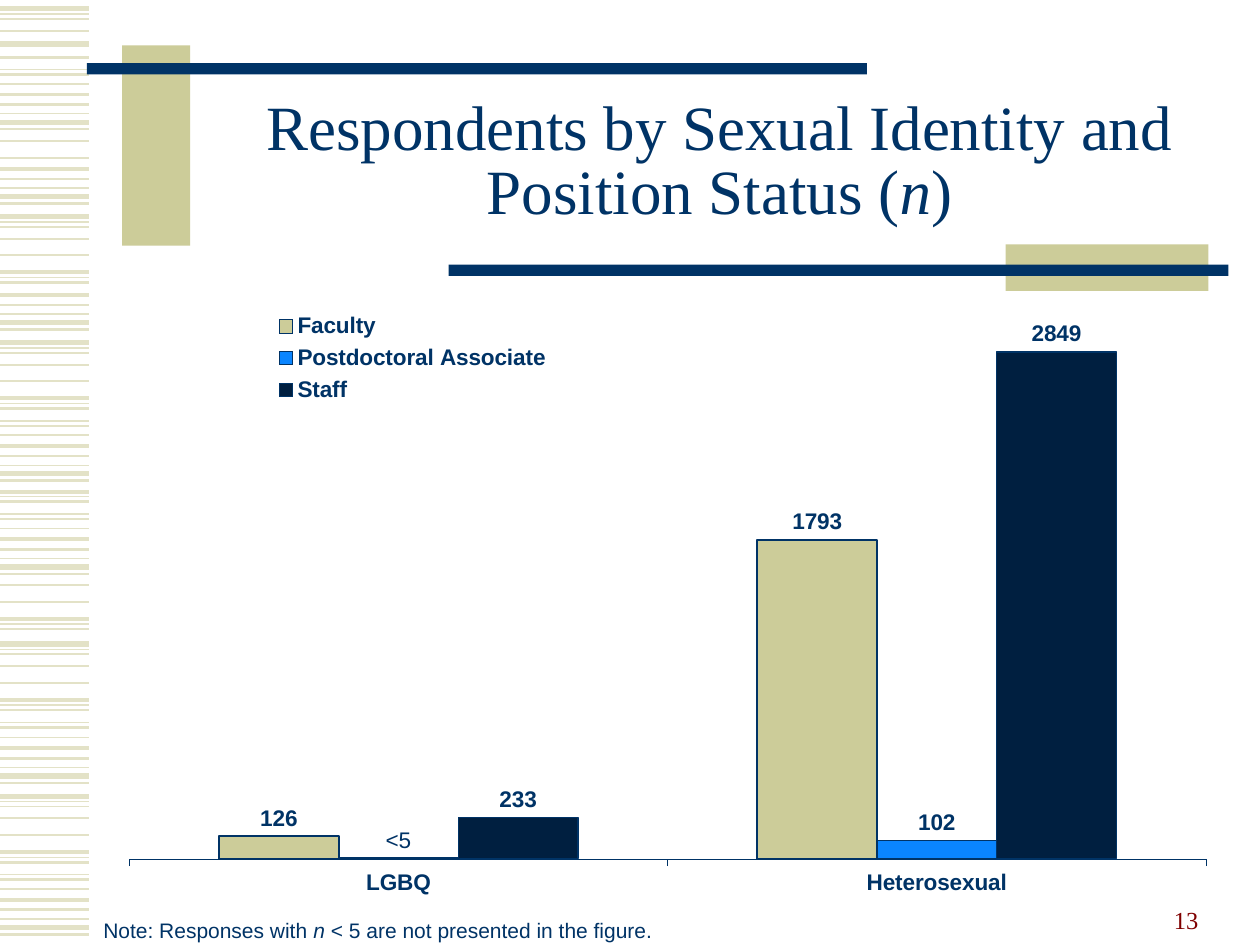
"""Build the slide on respondents by sexual identity and position status."""
from typing import NamedTuple

from lxml.etree import SubElement
from pptx import Presentation
from pptx.chart.data import CategoryChartData
from pptx.dml.color import RGBColor
from pptx.enum.chart import XL_CHART_TYPE as ChartType
from pptx.enum.chart import XL_LABEL_POSITION as LabelPosition
from pptx.enum.chart import XL_LEGEND_POSITION as LegendPosition
from pptx.enum.chart import XL_TICK_LABEL_POSITION as TickLabelPosition
from pptx.enum.chart import XL_TICK_MARK as TickMark
from pptx.enum.shapes import MSO_CONNECTOR as Connector
from pptx.enum.shapes import MSO_SHAPE as Shape
from pptx.enum.text import MSO_ANCHOR as Anchor
from pptx.enum.text import MSO_AUTO_SIZE as AutoSize
from pptx.enum.text import PP_ALIGN as Align
from pptx.oxml.ns import qn
from pptx.util import Pt

COLORS = {
    "navy": "003366",
    "khaki": "CCCC99",
    "stripe": "E3E2C7",
    "blue": "0A85FF",
    "midnight": "001F40",
    "maroon": "800000",
}


class Box(NamedTuple):
    left: float
    top: float
    width: float
    height: float

    def lengths(self) -> list:
        return [Pt(value) for value in self]


class Bar(NamedTuple):
    box: Box
    color: str


class Stripe(NamedTuple):
    offset: float
    weight: float


class StripeRun(NamedTuple):
    top: float
    stripes: list


class Series(NamedTuple):
    name: str
    values: tuple
    color: str
    line_width: float


SHORT_BAND = [Stripe(-22, 1), Stripe(-15.8, 2.25), Stripe(-10.1, 1.5),
              Stripe(-4.8, 0.75), Stripe(0, 3), Stripe(4, 1.5)]
LONG_BAND = [Stripe(0, 3), Stripe(3, 0.75), Stripe(5.9, 1), Stripe(12.6, 1),
             Stripe(22.1, 1), Stripe(31.9, 2.25), Stripe(34.8, 0.75),
             Stripe(37.7, 1.5), Stripe(44.8, 0.75), Stripe(47.7, 1.5)]
STRIPE_RUNS = [StripeRun(top, SHORT_BAND)
               for top in (69.8, 112.3, 270.7, 324, 443.5, 529.9)] + [
    StripeRun(184.3, SHORT_BAND[1:]),
    StripeRun(-5, LONG_BAND[7:]),
    StripeRun(5, LONG_BAND[:4]),
    StripeRun(123.8, LONG_BAND[:8]),
    StripeRun(195.8, LONG_BAND),
    StripeRun(249, LONG_BAND[5:]),
    StripeRun(321.8, LONG_BAND[3:8]),
    StripeRun(368, LONG_BAND),
    StripeRun(455, LONG_BAND),
    StripeRun(0, [Stripe(25.2, 3), Stripe(80.6, 1)]),
]
BARS = [
    Bar(Box(69.8, 25.9, 38.9, 114.5), "khaki"),
    Bar(Box(49.7, 36, 445.7, 6.5), "navy"),
    Bar(Box(574.6, 139.7, 115.9, 26.6), "khaki"),
    Bar(Box(256.3, 151.2, 445.7, 6.5), "navy"),
]
SERIES = [
    Series("Faculty", (126, 1793), "khaki", 1),
    Series("Postdoctoral Associate", (3, 102), "blue", 1),
    Series("Staff", (233, 2849), "midnight", 0.75),
]


def rgb(name: str) -> RGBColor:
    return RGBColor.from_string(COLORS[name])


def format_font(font, *, size: float, face: str, color: str = "navy",
                bold: bool = False, italic: bool = False) -> None:
    font.size, font.name, font.bold, font.italic = Pt(size), face, bold, italic
    font.color.rgb = rgb(color)


def write_text(shape, *parts: str, align, anchor=Anchor.TOP, spacing: float = 1,
               **font_format) -> None:
    """Write the parts as one paragraph, with every second part in italics."""
    frame = shape.text_frame
    frame.word_wrap = True
    frame.auto_size = AutoSize.NONE
    frame.vertical_anchor = anchor
    paragraph = frame.paragraphs[0]
    paragraph.alignment = align
    paragraph.line_spacing = spacing
    for index, part in enumerate(parts):
        run = paragraph.add_run()
        run.text = part
        format_font(run.font, italic=index % 2 == 1, **font_format)


def draw_stripe(slide, top: float, weight: float) -> None:
    line = slide.shapes.add_connector(Connector.STRAIGHT, 0, Pt(top), Pt(51), Pt(top))
    line.line.color.rgb = rgb("stripe")
    line.line.width = Pt(weight)
    SubElement(line.element.spPr, qn("a:effectLst"))


def draw_bar(slide, bar: Bar) -> None:
    shape = slide.shapes.add_shape(Shape.RECTANGLE, *bar.box.lengths())
    shape.shadow.inherit = False
    shape.fill.solid()
    shape.fill.fore_color.rgb = rgb(bar.color)
    shape.line.fill.background()


def set_layout(parent, box: Box, *, inner: bool = False) -> None:
    """Place a chart part by fractions of the chart area."""
    layout = parent.find(qn("c:layout"))
    if layout is None:
        layout = SubElement(parent, qn("c:layout"))
        parent.remove(layout)
        position = parent.find(qn("c:legendPos"))
        parent.insert(0 if position is None else parent.index(position) + 1, layout)
    for child in list(layout):
        layout.remove(child)
    manual = SubElement(layout, qn("c:manualLayout"))
    settings = [("layoutTarget", "inner")] if inner else []
    settings += [("xMode", "edge"), ("yMode", "edge"), *zip("xywh", box)]
    for tag, value in settings:
        SubElement(manual, qn(f"c:{tag}")).set("val", str(value))


def draw_chart(slide, box: Box) -> None:
    data = CategoryChartData()
    data.categories = ["LGBQ", "Heterosexual"]
    for series in SERIES:
        data.add_series(series.name, series.values)
    chart = slide.shapes.add_chart(ChartType.COLUMN_CLUSTERED, *box.lengths(), data).chart
    chart.has_title = False
    format_font(chart.font, size=12.9, face="Arial", bold=True)
    chart.has_legend = True
    chart.legend.position = LegendPosition.RIGHT
    chart.legend.include_in_layout = False
    set_layout(chart.legend._element, Box(0.14, 0.01, 0.27, 0.17))

    value_axis = chart.value_axis
    value_axis.minimum_scale, value_axis.maximum_scale = 0, 3000
    value_axis.has_major_gridlines = False
    value_axis.visible = False
    category_axis = chart.category_axis
    category_axis.major_tick_mark = TickMark.OUTSIDE
    category_axis.tick_label_position = TickLabelPosition.LOW
    category_axis.format.line.color.rgb = rgb("navy")
    category_axis.format.line.width = Pt(0.25)

    plot = chart.plots[0]
    plot.gap_width, plot.overlap = 150, 0
    plot.vary_by_categories = False
    set_layout(chart._chartSpace.chart.plotArea, Box(0.02, 0.04, 0.97, 0.89), inner=True)
    for series, drawn in zip(SERIES, plot.series):
        drawn.format.fill.solid()
        drawn.format.fill.fore_color.rgb = rgb(series.color)
        drawn.format.line.color.rgb = rgb("navy")
        drawn.format.line.width = Pt(series.line_width)
        drawn.data_labels.show_value = True
        drawn.data_labels.position = LabelPosition.OUTSIDE_END
    small_label = plot.series[1].points[0].data_label
    run = small_label.text_frame.paragraphs[0].add_run()
    run.text = "<5"
    format_font(run.font, size=12.9, face="Arial")
    small_label.position = LabelPosition.OUTSIDE_END


def main() -> None:
    presentation = Presentation()
    presentation.slide_width, presentation.slide_height = Pt(720), Pt(540)
    slide = presentation.slides.add_slide(presentation.slide_layouts[5])
    for band in STRIPE_RUNS:
        for stripe in band.stripes:
            draw_stripe(slide, band.top + stripe.offset, stripe.weight)
    for bar in BARS:
        draw_bar(slide, bar)

    title = slide.shapes.title
    title.left, title.top, title.width, title.height = Box(120.2, 48.2, 581.8, 90).lengths()
    write_text(title, "Respondents by Sexual Identity and Position Status (", "n", ")",
               align=Align.CENTER, anchor=Anchor.MIDDLE, spacing=0.85,
               size=36, face="Times New Roman")
    number = slide.shapes.add_textbox(*Box(519.1, 501.8, 172.8, 36).lengths())
    write_text(number, "13", align=Align.RIGHT, anchor=Anchor.BOTTOM,
               size=14, face="Times New Roman", color="maroon")
    note = slide.shapes.add_textbox(*Box(36, 513.4, 360, 26.6).lengths())
    write_text(note, "Note: Responses with ", "n", " < 5 are not presented in the figure.",
               align=Align.CENTER, spacing=1.5, size=12, face="Arial")
    draw_chart(slide, Box(61.2, 172.1, 634.3, 342.7))
    presentation.save("out.pptx")


if __name__ == "__main__":
    main()
